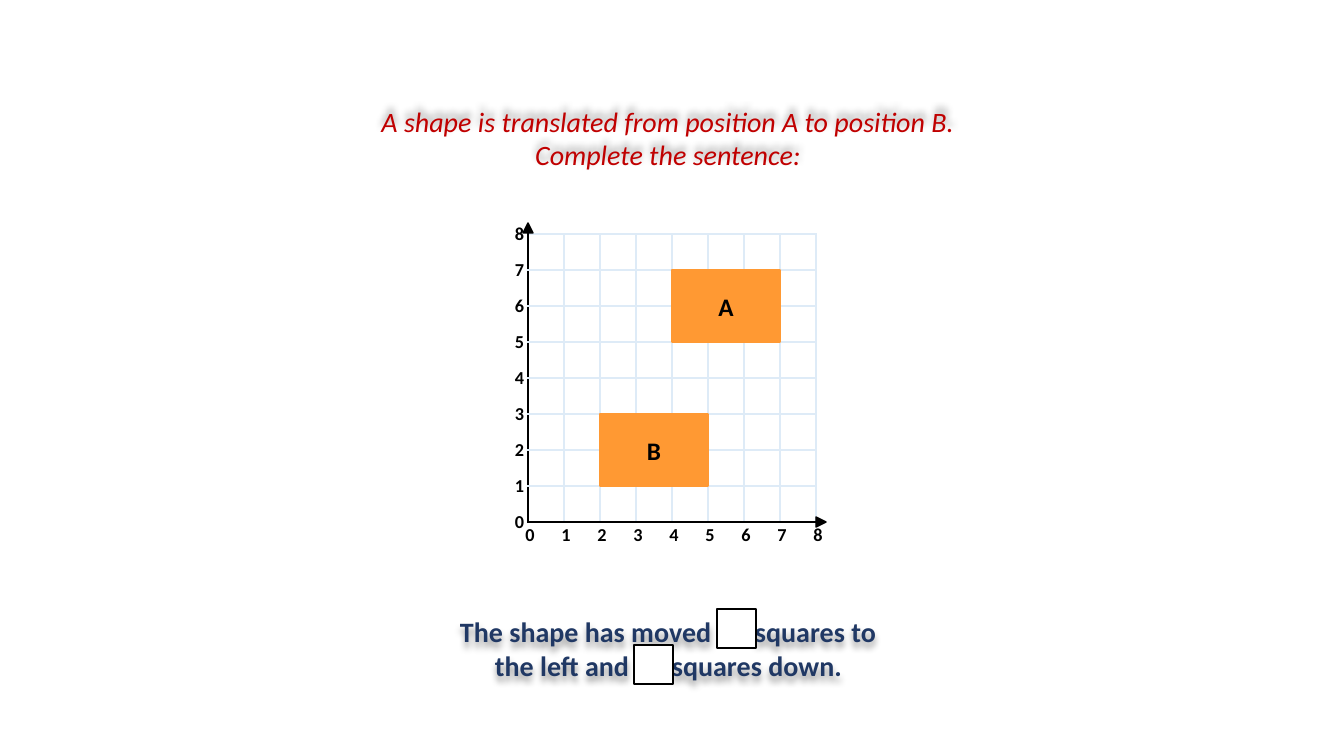
import lxml.etree
import pptx
import pptx.dml.color
import pptx.enum.shapes
import pptx.enum.text
import pptx.oxml.ns
import pptx.util

QUESTION = ["A shape is translated from position A to position B.",
            "Complete the sentence:"]
# words, left, top, width
SENTENCE_PARTS = [("The shape has moved", 460, 614, 256),
                  ("squares to", 755, 614, 150),
                  ("the left and", 495, 648, 138),
                  ("squares down.", 672, 648, 200)]
ANSWER_BOXES = [(717, 609), (634, 645)]
# letter, lower left corner in grid units
POSITIONS = [("A", 4, 5), ("B", 2, 1)]
SHAPE_COLS, SHAPE_ROWS = 3, 2
TICKS = [str(n) for n in range(9)]

SQUARES = 8
SQUARE = 36
GRID_LEFT, GRID_TOP = 528, 234
GRID_BOTTOM = GRID_TOP + SQUARES * SQUARE
LABEL = 39
ARROW = 10
ANSWER = 39

FONT = "Calibri"
BLACK, WHITE, GRID_LINE = "000000", "FFFFFF", "DEEBF7"
ORANGE, RED, NAVY = "FF9933", "C00000", "203864"
NO_TABLE_STYLE = "{2D5ABB26-0587-4C30-8999-92F81FD0307C}"
UP, DOWN = 270, 90
ALIGN = pptx.enum.text.PP_ALIGN
ANCHOR = pptx.enum.text.MSO_ANCHOR
PRESET = pptx.enum.shapes.MSO_SHAPE


def px(length):
    return pptx.util.Emu(round(length * 914400 / 100.8))


def color(hex_code):
    return pptx.dml.color.RGBColor.from_string(hex_code)


def add_xml(parent, tag, **attributes):
    return lxml.etree.SubElement(parent, pptx.oxml.ns.qn(tag), attributes)


def write(frame, lines, size, hex_code, align, bold=False, italic=False):
    frame.text = "\n".join(lines)
    for paragraph in frame.paragraphs:
        paragraph.alignment = align
        for run in paragraph.runs:
            run.font.name = FONT
            run.font.size = pptx.util.Pt(size)
            run.font.bold = bold
            run.font.italic = italic
            run.font.color.rgb = color(hex_code)


def add_shadowed_text(slide, lines, left, top, width, direction, **style):
    box = slide.shapes.add_textbox(px(left), px(top), px(width), px(34 * len(lines)))
    frame = box.text_frame
    frame.word_wrap = True
    frame.margin_left = frame.margin_right = 0
    frame.margin_top = frame.margin_bottom = 0
    write(frame, lines, 20, **style)
    effects = add_xml(box._element.spPr, "a:effectLst")
    shadow = add_xml(effects, "a:outerShdw", blurRad="63500", dist=str(px(6)),
                     dir=str(direction * 60000), algn="ctr", rotWithShape="0")
    black = add_xml(shadow, "a:srgbClr", val=BLACK)
    add_xml(black, "a:alpha", val="40000")


def add_plain_table(slide, rows, cols, left, top, col_width, row_height):
    graphic = slide.shapes.add_table(rows, cols, px(left), px(top),
                                     px(cols * col_width), px(rows * row_height))
    table = graphic.table
    table.first_row = table.horz_banding = False
    for style_id in graphic._element.iter(pptx.oxml.ns.qn("a:tableStyleId")):
        style_id.text = NO_TABLE_STYLE
    for column in table.columns:
        column.width = px(col_width)
    for row in table.rows:
        row.height = px(row_height)
    return table


def add_tick_labels(slide, labels, rows, cols, left, top, size, align, anchor):
    table = add_plain_table(slide, rows, cols, left, top, *size)
    for cell, label in zip(table.iter_cells(), labels):
        cell.fill.background()
        cell.vertical_anchor = anchor
        cell.margin_left = cell.margin_right = px(10)
        cell.margin_top = cell.margin_bottom = px(5)
        write(cell.text_frame, [label], 13, BLACK, align, bold=True)


def add_grid(slide):
    """Draw the squares; the left and bottom edges serve as the axes."""
    table = add_plain_table(slide, SQUARES, SQUARES, GRID_LEFT, GRID_TOP, SQUARE, SQUARE)
    for index, cell in enumerate(table.iter_cells()):
        row, col = divmod(index, SQUARES)
        cell.margin_top = cell.margin_bottom = 0
        edges = {"a:lnL": BLACK if col == 0 else GRID_LINE,
                 "a:lnR": GRID_LINE,
                 "a:lnT": GRID_LINE,
                 "a:lnB": BLACK if row == SQUARES - 1 else GRID_LINE}
        properties = cell._tc.get_or_add_tcPr()
        for tag, hex_code in edges.items():
            line = add_xml(properties, tag, w="12700")
            add_xml(add_xml(line, "a:solidFill"), "a:srgbClr", val=hex_code)
        cell.fill.solid()
        cell.fill.fore_color.rgb = color(WHITE)


def add_figure(slide, preset, left, top, width, height, fill, line):
    figure = slide.shapes.add_shape(preset, px(left), px(top), px(width), px(height))
    figure.shadow.inherit = False
    figure.fill.solid()
    figure.fill.fore_color.rgb = color(fill)
    figure.line.color.rgb = color(line)
    figure.line.width = pptx.util.Pt(1)
    return figure


def add_axis_arrow(slide, left, top, rotation):
    arrow = add_figure(slide, PRESET.ISOSCELES_TRIANGLE, left, top, ARROW, ARROW, BLACK, BLACK)
    arrow.rotation = rotation


def main():
    deck = pptx.Presentation()
    deck.slide_width, deck.slide_height = px(1344), px(756)
    slide = deck.slides.add_slide(deck.slide_layouts[6])

    add_shadowed_text(slide, QUESTION, 199, 104, 938, UP,
                      hex_code=RED, align=ALIGN.CENTER, italic=True)
    for words, left, top, width in SENTENCE_PARTS:
        add_shadowed_text(slide, [words], left, top, width, DOWN,
                          hex_code=NAVY, align=ALIGN.LEFT, bold=True)

    add_tick_labels(slide, TICKS[::-1], len(TICKS), 1, GRID_LEFT - 33, GRID_TOP - SQUARE // 2,
                    (LABEL, SQUARE), ALIGN.RIGHT, ANCHOR.MIDDLE)
    add_grid(slide)
    add_axis_arrow(slide, GRID_LEFT - ARROW // 2, GRID_TOP - ARROW - 1, 0)
    for letter, col, row in POSITIONS:
        position = add_figure(slide, PRESET.RECTANGLE,
                              GRID_LEFT + col * SQUARE,
                              GRID_BOTTOM - (row + SHAPE_ROWS) * SQUARE,
                              SHAPE_COLS * SQUARE, SHAPE_ROWS * SQUARE, ORANGE, ORANGE)
        position.text_frame.vertical_anchor = ANCHOR.MIDDLE
        write(position.text_frame, [letter], 18, BLACK, ALIGN.CENTER, bold=True)
    add_tick_labels(slide, TICKS, 1, len(TICKS), GRID_LEFT - 16, GRID_BOTTOM - 3,
                    (SQUARE, LABEL), ALIGN.CENTER, ANCHOR.TOP)
    add_axis_arrow(slide, GRID_LEFT + SQUARES * SQUARE, GRID_BOTTOM - ARROW // 2, 90)

    for left, top in ANSWER_BOXES:
        add_figure(slide, PRESET.RECTANGLE, left, top, ANSWER, ANSWER, WHITE, BLACK)

    deck.save("out.pptx")


if __name__ == "__main__":
    main()
